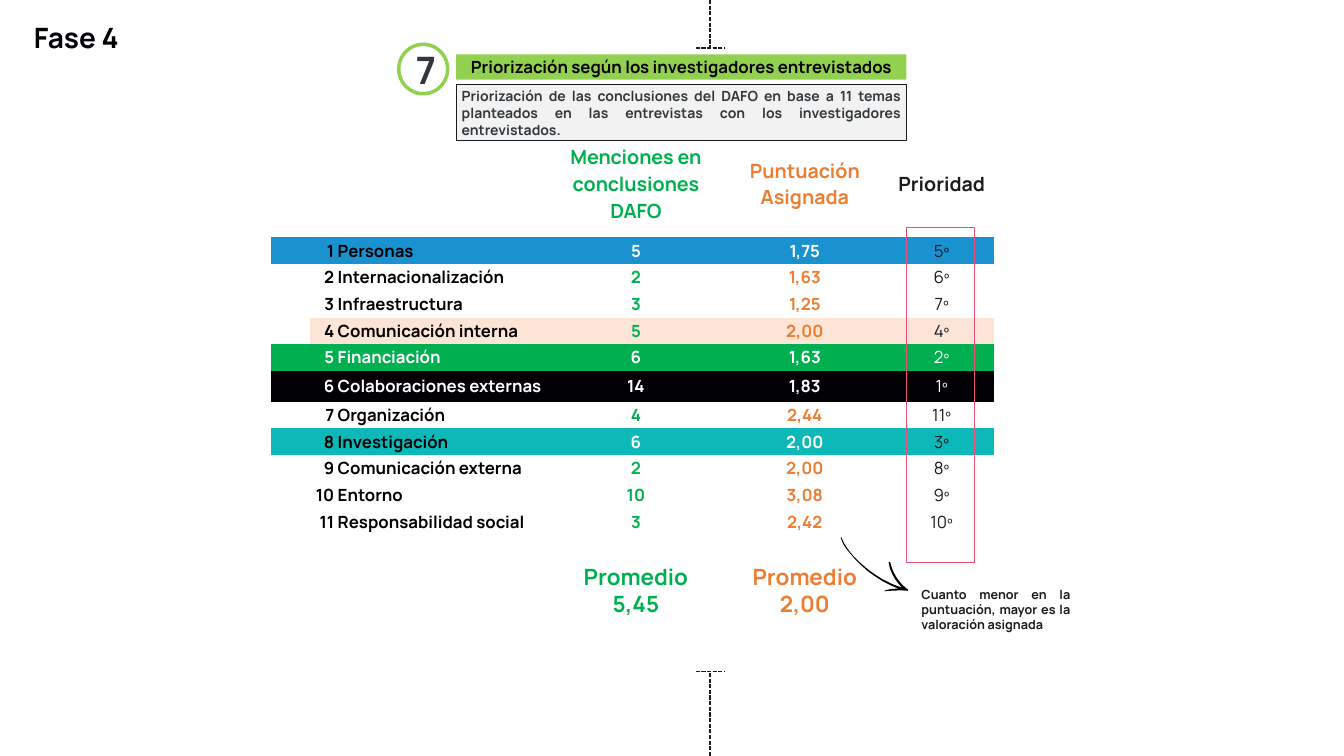
from dataclasses import dataclass

import pptx
import pptx.dml.color
import pptx.enum.dml
import pptx.enum.shapes
import pptx.enum.text
import pptx.oxml
import pptx.oxml.ns
import pptx.util

Inches = pptx.util.Inches
Pt = pptx.util.Pt
ALIGN = pptx.enum.text.PP_ALIGN
ANCHOR = pptx.enum.text.MSO_ANCHOR
SHAPE = pptx.enum.shapes.MSO_SHAPE

COLORS = {
    "white": "FFFFFF", "black": "000000", "night": "000004", "ink": "191B1E",
    "slate": "31373B", "lime": "92D050", "pale": "F2F2F2", "green": "00B050",
    "orange": "ED7D31", "blue": "1B92D0", "peach": "FCE4D6", "teal": "0CB8B8",
    "pink": "EC4E75",
}
NO_STYLE = "{2D5ABB26-0587-4C30-8999-92F81FD0307C}"


@dataclass
class Topic:
    name: str
    mentions: str
    score: str
    rank: str
    fill: str = ""
    name_color: str = "black"
    mentions_color: str = "green"
    score_color: str = "orange"
    rank_color: str = "ink"
    first_filled_column: int = 0


WHITE_FIGURES = {"mentions_color": "white", "score_color": "white"}
ALL_WHITE = {**WHITE_FIGURES, "name_color": "white", "rank_color": "white"}
TOPICS = [
    Topic("Personas", "5", "1,75", "5º", "blue", **WHITE_FIGURES),
    Topic("Internacionalización", "2", "1,63", "6º"),
    Topic("Infraestructura", "3", "1,25", "7º"),
    Topic("Comunicación interna", "5", "2,00", "4º", "peach", first_filled_column=1),
    Topic("Financiación", "6", "1,63", "2º", "green", **ALL_WHITE),
    Topic("Colaboraciones externas", "14", "1,83", "1º", "night", **ALL_WHITE),
    Topic("Organización", "4", "2,44", "11º"),
    Topic("Investigación", "6", "2,00", "3º", "teal", **WHITE_FIGURES),
    Topic("Comunicación externa", "2", "2,00", "8º"),
    Topic("Entorno", "10", "3,08", "9º"),
    Topic("Responsabilidad social", "3", "2,42", "10º"),
]
COLUMN_WIDTHS = [0.77, 0.48, 4.31, 3.35, 3.35, 2.08]
ROW_HEIGHTS = [2.12] + [0.53] * 5 + [0.61] + [0.53] * 8

# Start point, then cubic segments (two control points and an end point).
ARROW_START = (17.63, 11.17)
ARROW_CURVES = [
    ((17.66, 11.36), (17.76, 11.53), (17.9, 11.66)),
    ((17.81, 11.63), (17.71, 11.6), (17.62, 11.55)),
    ((17.49, 11.49), (17.37, 11.41), (17.26, 11.33)),
    ((17.04, 11.16), (16.79, 10.93), (16.69, 10.66)),
    ((16.69, 10.66), (16.67, 10.66), (16.68, 10.67)),
    ((16.71, 10.8), (16.8, 10.91), (16.89, 11.01)),
    ((16.98, 11.13), (17.1, 11.23), (17.21, 11.33)),
    ((17.33, 11.42), (17.45, 11.5), (17.58, 11.57)),
    ((17.66, 11.61), (17.74, 11.65), (17.83, 11.68)),
    ((17.73, 11.68), (17.63, 11.69), (17.55, 11.72)),
    ((17.53, 11.72), (17.54, 11.73), (17.55, 11.73)),
    ((17.69, 11.72), (17.84, 11.71), (17.99, 11.72)),
    ((18.01, 11.73), (18.02, 11.7), (18, 11.69)),
    ((17.83, 11.56), (17.71, 11.38), (17.66, 11.16)),
    ((17.66, 11.14), (17.62, 11.15), (17.63, 11.17)),
]


def rgb(name: str) -> pptx.dml.color.RGBColor:
    return pptx.dml.color.RGBColor.from_string(COLORS[name])


def write(frame, text: str, *, size: float, color: str = "ink", bold: bool = True,
          align=ALIGN.LEFT) -> None:
    """Fill a text frame, one paragraph per line of text."""
    for index, line in enumerate(text.split("\n")):
        para = frame.add_paragraph() if index else frame.paragraphs[0]
        para.alignment = align
        span = para.add_run()
        span.text = line
        span.font.name = "Manrope"
        span.font.size = Pt(size)
        span.font.bold = bold
        span.font.color.rgb = rgb(color)


def add_box(page, at: tuple, text: str, **style) -> None:
    box = page.shapes.add_textbox(*map(Inches, at))
    box.text_frame.word_wrap = True
    write(box.text_frame, text, **style)


def add_panel(page, kind, at: tuple, fill: str = "", line: str = "", width: float = 1):
    panel = page.shapes.add_shape(kind, *map(Inches, at))
    panel.shadow.inherit = False
    if fill:
        panel.fill.solid()
        panel.fill.fore_color.rgb = rgb(fill)
    else:
        panel.fill.background()
    if line:
        panel.line.color.rgb = rgb(line)
        panel.line.width = Pt(width)
    else:
        panel.line.fill.background()
    panel.text_frame.word_wrap = True
    return panel


def add_dashes(page, start: tuple, end: tuple) -> None:
    line = page.shapes.add_connector(pptx.enum.shapes.MSO_CONNECTOR.STRAIGHT,
                                     *map(Inches, start + end))
    line.line.color.rgb = rgb("ink")
    line.line.width = Pt(2)
    line.line.dash_style = pptx.enum.dml.MSO_LINE.SQUARE_DOT
    effects = pptx.oxml.parse_xml(f"<a:effectLst {pptx.oxml.ns.nsdecls('a')}/>")
    line._element.spPr.append(effects)


def add_arrow(page, steps: int = 8) -> None:
    """Draw the hand-drawn arrow, each curve as short straight pieces."""
    points, start = [], ARROW_START
    for first, second, end in ARROW_CURVES:
        for step in range(1, steps + 1):
            t = step / steps
            points.append(tuple(
                Inches((1 - t) ** 3 * a + 3 * (1 - t) ** 2 * t * b
                       + 3 * (1 - t) * t ** 2 * c + t ** 3 * d)
                for a, b, c, d in zip(start, first, second, end)))
        start = end
    builder = page.shapes.build_freeform(*map(Inches, ARROW_START))
    builder.add_line_segments(points, close=True)
    arrow = builder.convert_to_shape()
    arrow.shadow.inherit = False
    arrow.fill.solid()
    arrow.fill.fore_color.rgb = rgb("black")
    arrow.line.fill.background()


def add_ranking(page) -> None:
    frame = page.shapes.add_table(
        len(ROW_HEIGHTS), len(COLUMN_WIDTHS), Inches(5.38), Inches(2.59),
        Inches(sum(COLUMN_WIDTHS)), Inches(sum(ROW_HEIGHTS)))
    table = frame.table
    table.first_row = table.horz_banding = False
    table._tbl.tblPr.find(pptx.oxml.ns.qn("a:tableStyleId")).text = NO_STYLE
    for column, width in zip(table.columns, COLUMN_WIDTHS):
        column.width = Inches(width)
    for row, height in zip(table.rows, ROW_HEIGHTS):
        row.height = Inches(height)
    for cell in table.iter_cells():
        cell.margin_left = cell.margin_right = cell.margin_top = cell.margin_bottom = 0
        cell.vertical_anchor = ANCHOR.MIDDLE
        cell.fill.background()

    def put(row: int, column: int, text: str, color: str, size: float = 24,
            align=ALIGN.CENTER, **style) -> None:
        write(table.cell(row, column).text_frame, text, color=color, size=size,
              align=align, **style)

    put(0, 3, "Menciones en conclusiones DAFO", "green", 28)
    put(0, 4, "Puntuación\nAsignada", "orange", 28)
    put(0, 5, "Prioridad", "ink", 28)
    for row, topic in enumerate(TOPICS, start=1):
        put(row, 1, str(row), topic.name_color, align=ALIGN.RIGHT)
        put(row, 2, topic.name, topic.name_color, align=ALIGN.LEFT)
        table.cell(row, 2).margin_left = Inches(0.07)
        put(row, 3, topic.mentions, topic.mentions_color)
        put(row, 4, topic.score, topic.score_color)
        put(row, 5, topic.rank, topic.rank_color, bold=False)
        if topic.fill:
            for column in range(topic.first_filled_column, len(COLUMN_WIDTHS)):
                fill = table.cell(row, column).fill
                fill.solid()
                fill.fore_color.rgb = rgb(topic.fill)
    for column, average, color in [(3, "5,45", "green"), (4, "2,00", "orange")]:
        put(13, column, "Promedio", color, 32)
        put(14, column, average, color, 32)


def main() -> None:
    deck = pptx.Presentation()
    deck.slide_width, deck.slide_height = Inches(26.66), Inches(15)
    page = deck.slides.add_slide(deck.slide_layouts[5])

    title = page.shapes.title
    title.left, title.top, title.width, title.height = map(Inches, (0.57, 0.36, 3.88, 0.77))
    title.text_frame.auto_size = pptx.enum.text.MSO_AUTO_SIZE.NONE
    title.text_frame.vertical_anchor = ANCHOR.TOP
    write(title.text_frame, "Fase 4", size=40, color="night")

    for edge, tick in [(0, 0.95), (15, 13.32)]:
        add_dashes(page, (14.08, edge), (14.08, tick))
        add_dashes(page, (13.8, tick), (14.36, tick))

    add_panel(page, SHAPE.OVAL, (7.91, 0.88, 0.97, 0.98), "white", "lime", 5)
    add_box(page, (8.15, 0.88, 0.74, 1.01), "7", size=54, color="slate")
    banner = add_panel(page, SHAPE.RECTANGLE, (9.05, 1.08, 8.93, 0.5), "lime")
    write(banner.text_frame, "Priorización según los investigadores entrevistados",
          size=24, color="night", align=ALIGN.CENTER)
    summary = add_panel(page, SHAPE.RECTANGLE, (9.06, 1.68, 8.91, 1.11), "pale", "ink", 0.75)
    write(summary.text_frame,
          "Priorización de las conclusiones del DAFO en base a 11 temas planteados "
          "en las entrevistas con los investigadores entrevistados.",
          size=20, color="slate", align=ALIGN.JUSTIFY)

    add_ranking(page)
    add_arrow(page)
    add_box(page, (18.18, 11.59, 3.15, 1.01),
            "Cuanto menor en la puntuación, mayor es la valoración asignada",
            size=18, align=ALIGN.JUSTIFY)
    add_panel(page, SHAPE.RECTANGLE, (17.98, 4.51, 1.34, 6.64), line="pink")
    deck.save("out.pptx")


if __name__ == "__main__":
    main()
